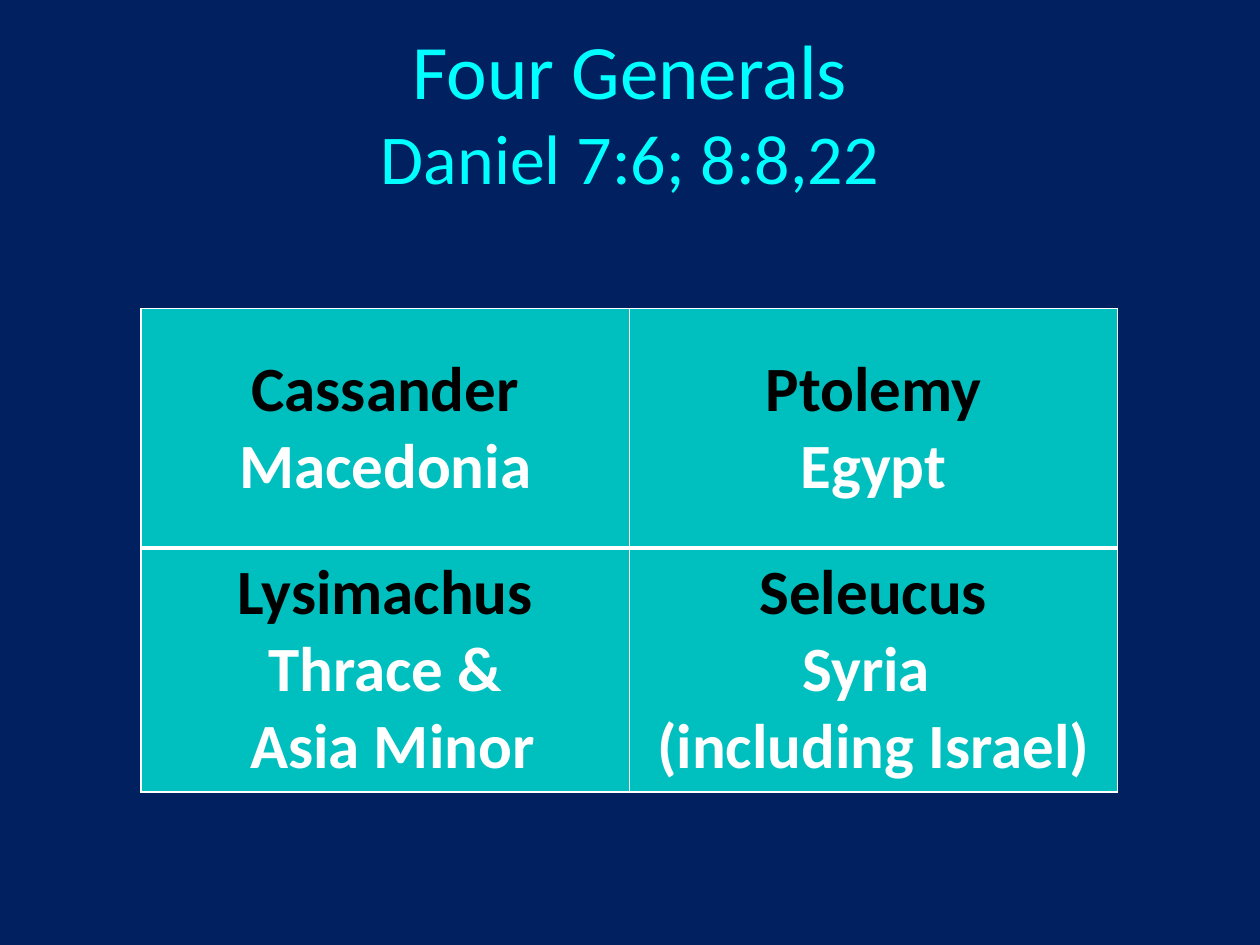
from lxml import etree
from pptx import Presentation
from pptx.dml.color import RGBColor
from pptx.enum.text import MSO_ANCHOR, MSO_AUTO_SIZE, PP_ALIGN
from pptx.oxml.ns import qn
from pptx.util import Inches, Pt

CENTER = PP_ALIGN.CENTER
MIDDLE = MSO_ANCHOR.MIDDLE
NO_FIT = MSO_AUTO_SIZE.NONE

NAVY = RGBColor(0x00, 0x20, 0x60)
CYAN = RGBColor(0x00, 0xFF, 0xFF)
TEAL = RGBColor(0x00, 0xBF, 0xBF)
BLACK = RGBColor(0x00, 0x00, 0x00)
WHITE = RGBColor(0xFF, 0xFF, 0xFF)

TITLE_ONLY = 5
THIN, THICK = 1, 3

# Each general is followed by the lands he received
GENERALS = [
    [["Cassander", "Macedonia"], ["Ptolemy", "Egypt"]],
    [["Lysimachus", "Thrace &", " Asia Minor"],
     ["Seleucus", "Syria ", "(including Israel)"]],
]


class SlideBuilder:
    font_name = "Calibri"

    def __init__(self, deck):
        self.page = deck.slides.add_slide(deck.slide_layouts[TITLE_ONLY])

    def background(self, color):
        fill = self.page.background.fill
        fill.solid()
        fill.fore_color.rgb = color

    def span(self, para, text, color, **formats):
        span = para.add_run()
        span.text = text
        span.font.color.rgb = color
        for name, value in {"name": self.font_name, **formats}.items():
            setattr(span.font, name, value)

    def title(self, lines, color, left, top, width, height):
        box = self.page.shapes.title
        place = {"left": left, "top": top, "width": width, "height": height}
        for name, value in place.items():
            setattr(box, name, Inches(value))
        frame = box.text_frame
        layout = {"auto_size": NO_FIT, "vertical_anchor": MIDDLE, "word_wrap": True}
        for name, value in layout.items():
            setattr(frame, name, value)
        para = frame.paragraphs[0]
        para.alignment = CENTER
        for index, (text, size) in enumerate(lines):
            if index:
                para.add_line_break()
            self.span(para, text, color, size=Pt(size))

    def borders(self, cell, color, widths):
        properties = cell._tc.get_or_add_tcPr()
        for side, width in widths.items():
            line = etree.SubElement(properties, qn(f"a:ln{side}"), w=str(Pt(width)))
            fill = etree.SubElement(line, qn("a:solidFill"))
            etree.SubElement(fill, qn("a:srgbClr"), val=str(color))

    def cell(self, cell, lines, widths):
        self.borders(cell, WHITE, widths)
        cell.fill.solid()
        cell.fill.fore_color.rgb = TEAL
        cell.vertical_anchor = MIDDLE
        frame = cell.text_frame
        for index, text in enumerate(lines):
            para = frame.add_paragraph() if index else frame.paragraphs[0]
            para.alignment = CENTER
            color = WHITE if index else BLACK
            self.span(para, text, color, size=Pt(36), bold=True)

    def table(self, rows, left, top, width, height):
        place = [Inches(value) for value in (left, top, width, height)]
        table = self.page.shapes.add_table(len(rows), len(rows[0]), *place).table
        for row_index, row in enumerate(rows):
            # The rule under the first row is heavier than the rest
            widths = {"L": THIN, "R": THIN,
                      "T": THICK if row_index == 1 else THIN,
                      "B": THICK if row_index == 0 else THIN}
            for column_index, lines in enumerate(row):
                self.cell(table.cell(row_index, column_index), lines, widths)


def main():
    deck = Presentation()
    deck.slide_width = Inches(10)
    deck.slide_height = Inches(7.5)
    builder = SlideBuilder(deck)
    builder.background(NAVY)

    # Title and reference
    builder.title([("Four Generals", 44), ("Daniel 7:6; 8:8,22", 40)],
                  CYAN, 2.57, 0.25, 4.86, 1.25)

    # Generals and their lands
    builder.table(GENERALS, 1.12, 2.45, 7.75, 3.8)

    deck.save("out.pptx")


if __name__ == "__main__":
    main()
